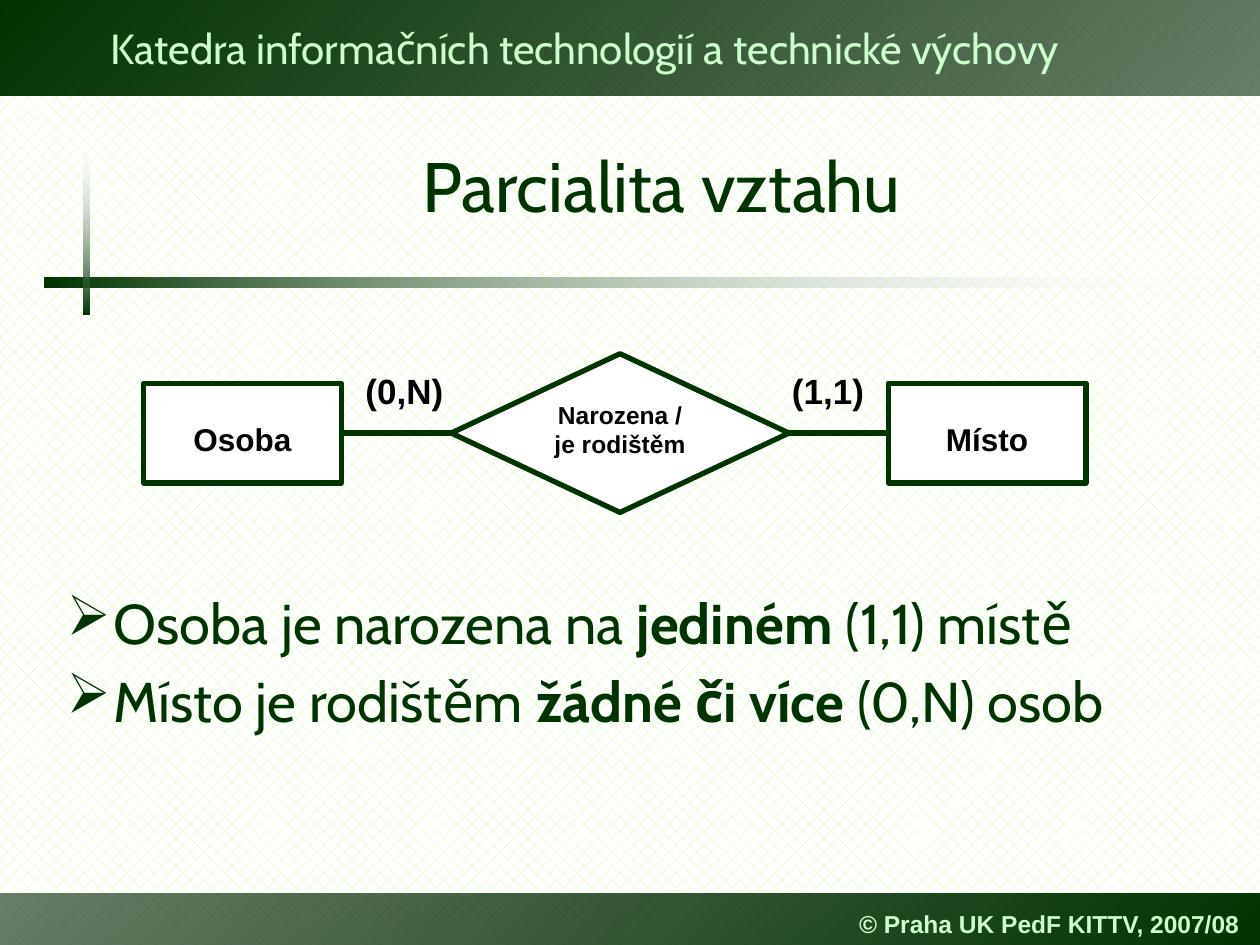
from lxml import etree
from pptx import Presentation
from pptx.dml.color import RGBColor
from pptx.enum.dml import MSO_PATTERN
from pptx.enum.shapes import MSO_CONNECTOR, MSO_SHAPE
from pptx.enum.text import MSO_ANCHOR, PP_ALIGN
from pptx.oxml.ns import qn
from pptx.util import Pt

RECTANGLE, DIAMOND = MSO_SHAPE.RECTANGLE, MSO_SHAPE.DIAMOND
STRAIGHT = MSO_CONNECTOR.STRAIGHT
PERCENT_25 = MSO_PATTERN.PERCENT_25
LEFT, CENTER = PP_ALIGN.LEFT, PP_ALIGN.CENTER
TOP, MIDDLE = MSO_ANCHOR.TOP, MSO_ANCHOR.MIDDLE
RIGHT_SIDE, LEFT_SIDE = 3, 1

THEME = {
    "dark": "003300", "deep": "002400", "white": "FFFFFF", "black": "000000",
    "pale": "CCFFCC", "pattern": "CCFF99", "line": 3,
    "header": {"name": "Cabin", "size": 24, "color": "pale"},
    "footer": {"name": "Arial", "size": 14, "color": "pale", "bold": True},
    "title": {"name": "Cabin", "size": 40, "color": "dark"},
    "body": {"name": "Cabin", "size": 32, "color": "dark"},
    "entity": {"name": "Arial", "size": 18, "color": "black", "bold": True},
    "relation": {"name": "Arial", "size": 14, "color": "black", "bold": True},
    "cardinality": {"name": "Arial", "size": 20, "color": "black", "bold": True},
}

WIDTH, HEIGHT = 720, 540
BAR_STOPS = [("deep", 59), ("dark", 100)]
RULE_STOPS = [("dark", 100), ("white", 0)]
BARS = [
    ((0, 510.5, WIDTH, 29.5), BAR_STOPS, 315, 0),
    ((0, 0, WIDTH, 54.7), BAR_STOPS, 315, 180),
    ((25.2, 158.4, 683.3, 5.8), RULE_STOPS, 0, 0),
    ((47.8, 76.7, 3.4, 103), RULE_STOPS, 90, 0),
]
HEADER = "Katedra informačních technologií a technické výchovy"
FOOTER = "© Praha UK PedF KITTV, 2007/08"
TITLE = "Parcialita vztahu"
DIAGRAM_MIDDLE = 247.5
NODES = [
    ("Osoba", RECTANGLE, "entity", 82.1, 113, 57),
    ("Narozena /\vje rodištěm", DIAMOND, "relation", 257.8, 193, 90.7),
    ("Místo", RECTANGLE, "entity", 507.6, 113, 57),
]
CARDINALITIES = [("(1,1)", 445, 56.2), ("(0,N)", 201.6, 59)]
BULLETS = [
    [("Osoba je narozena na ", False), ("jediném ", True), ("(1,1) místě", False)],
    [("Místo je rodištěm ", False), ("žádné či více ", True), ("(0,N) osob", False)],
]
BULLET_INDENT = 27


def color(key):
    return RGBColor.from_string(THEME[key])


def format_font(font, style, **changes):
    values = {**THEME[style], **changes}
    values["size"] = Pt(values["size"])
    font.color.rgb = color(values.pop("color"))
    for name, value in values.items():
        setattr(font, name, value)


def write(shape, text, style, alignment=LEFT, anchor=TOP, wrap=True):
    frame = shape.text_frame
    frame.word_wrap, frame.vertical_anchor = wrap, anchor
    paragraph = frame.paragraphs[0]
    paragraph.text, paragraph.alignment = text, alignment
    for run in paragraph.runs:
        format_font(run.font, style)
    return paragraph


def add_text(slide, box, *arguments, **options):
    shape = slide.shapes.add_textbox(*map(Pt, box))
    return write(shape, *arguments, **options)


def add_block(slide, kind, box):
    shape = slide.shapes.add_shape(kind, *map(Pt, box))
    shape.shadow.inherit = False
    return shape


def add_bar(slide, box, stops, angle, rotation):
    shape = add_block(slide, RECTANGLE, box)
    shape.rotation = rotation
    shape.line.fill.background()
    shape.fill.gradient()
    shape.fill.gradient_angle = angle
    for stop, (key, opacity) in zip(shape.fill.gradient_stops, stops):
        stop.color.rgb = color(key)
    tints = shape._element.spPr.iter(qn("a:srgbClr"))
    for tint, (key, opacity) in zip(tints, stops):
        etree.SubElement(tint, qn("a:alpha"), val=str(opacity * 1000))


def add_text_shadow(run):
    effects = etree.Element(qn("a:effectLst"))
    shadow = etree.SubElement(effects, qn("a:outerShdw"), dist="38100", dir="2700000")
    etree.SubElement(shadow, qn("a:srgbClr"), val=THEME["black"])
    run.font._element.find(qn("a:latin")).addprevious(effects)


def add_node(slide, text, kind, style, left, width, height):
    shape = add_block(slide, kind, (left, DIAGRAM_MIDDLE - height / 2, width, height))
    shape.fill.solid()
    shape.fill.fore_color.rgb = color("white")
    shape.line.color.rgb = color("dark")
    shape.line.width = Pt(THEME["line"])
    if kind == RECTANGLE:
        shape.text_frame.margin_top = Pt(10.6)
    write(shape, text, style, CENTER, MIDDLE if kind == RECTANGLE else TOP)
    return shape


def add_link(slide, start, end):
    connector = slide.shapes.add_connector(STRAIGHT, 0, 0, 0, 0)
    connector.begin_connect(start, RIGHT_SIDE)
    connector.end_connect(end, LEFT_SIDE)
    connector.line.color.rgb = color("dark")
    connector.line.width = Pt(THEME["line"])
    etree.SubElement(connector._element.spPr, qn("a:effectLst"))


def add_bullets(slide, box):
    frame = slide.shapes.add_textbox(*map(Pt, box)).text_frame
    frame.word_wrap = True
    for index, pieces in enumerate(BULLETS):
        paragraph = frame.add_paragraph() if index else frame.paragraphs[0]
        paragraph.space_before = Pt(6.4 if index else 0)
        properties = paragraph._p.get_or_add_pPr()
        properties.set("marL", str(Pt(BULLET_INDENT)))
        properties.set("indent", str(-Pt(BULLET_INDENT)))
        tint = etree.SubElement(properties, qn("a:buClr"))
        etree.SubElement(tint, qn("a:srgbClr"), val=THEME["dark"])
        etree.SubElement(properties, qn("a:buChar"), char="➢")
        for text, bold in pieces:
            run = paragraph.add_run()
            run.text = text
            format_font(run.font, "body", bold=bold)


def main():
    presentation = Presentation()
    presentation.slide_width, presentation.slide_height = Pt(WIDTH), Pt(HEIGHT)
    slide = presentation.slides.add_slide(presentation.slide_layouts[6])
    background = slide.background.fill
    background.patterned()
    background.pattern = PERCENT_25
    background.fore_color.rgb = color("pattern")
    background.back_color.rgb = color("white")

    for bar in BARS:
        add_bar(slide, *bar)
    header = add_text(slide, (56.2, 9.4, 581, 36), HEADER, "header", wrap=False)
    add_text_shadow(header.runs[0])
    add_text(slide, (483.8, 516.2, 236.2, 23.8), FOOTER, "footer", anchor=MIDDLE, wrap=False)
    add_text(slide, (54, 60.5, 648, 90), TITLE, "title", CENTER, MIDDLE)

    nodes = [add_node(slide, *node) for node in NODES]
    for start, end in zip(nodes, nodes[1:]):
        add_link(slide, start, end)
    for text, left, width in CARDINALITIES:
        add_text(slide, (left, 207.4, width, 31.7), text, "cardinality", CENTER, wrap=False)
    add_bullets(slide, (31, 332.6, 689, 136))
    presentation.save("out.pptx")


if __name__ == "__main__":
    main()
